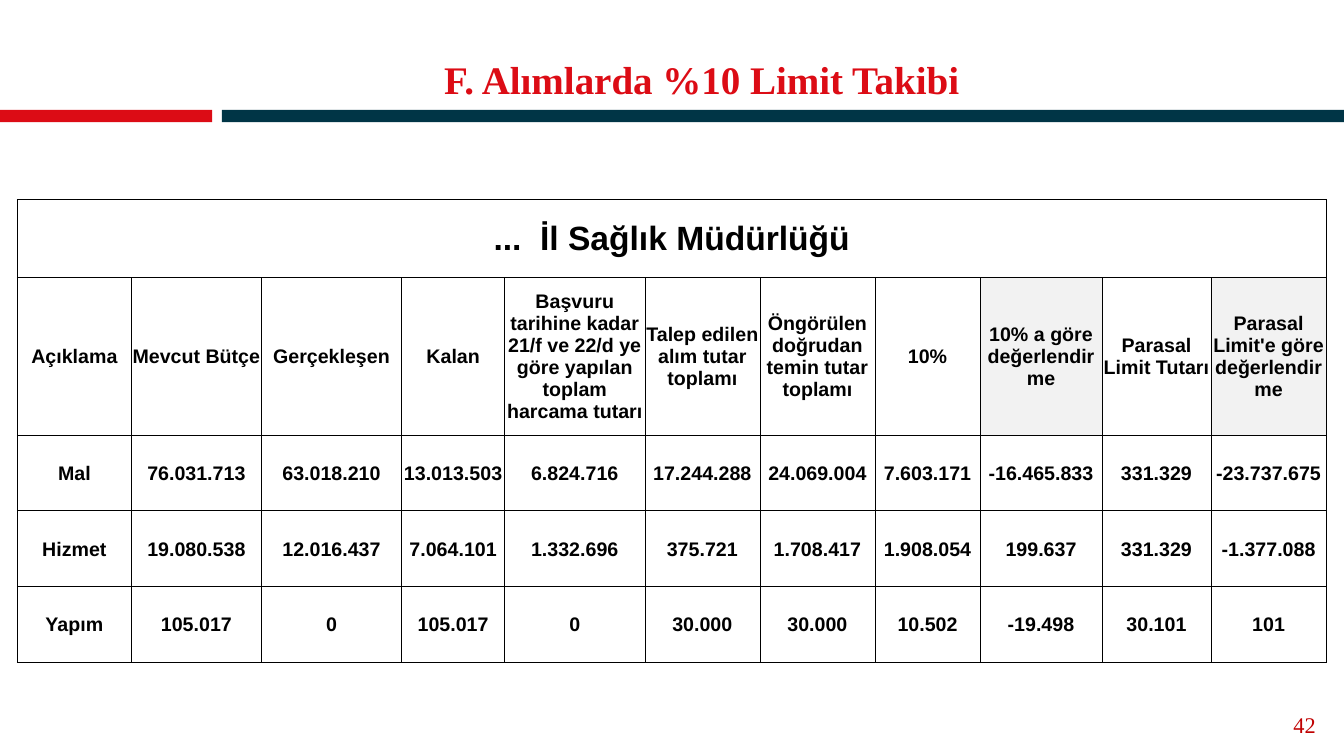
import pptx
import pptx.dml.color
import pptx.enum.shapes
import pptx.enum.text
import pptx.oxml
import pptx.oxml.ns
import pptx.util

Cm, Pt = pptx.util.Cm, pptx.util.Pt
ALIGN = pptx.enum.text.PP_ALIGN
MIDDLE = pptx.enum.text.MSO_ANCHOR.MIDDLE

TITLE = "F. Alımlarda %10 Limit Takibi"
NUMBER = "42"
OFFICE = "...  İl Sağlık Müdürlüğü"
HEADS = [
    "Açıklama", "Mevcut Bütçe", "Gerçekleşen", "Kalan",
    "Başvuru tarihine kadar 21/f ve 22/d ye göre yapılan toplam harcama tutarı",
    "Talep edilen alım tutar toplamı",
    "Öngörülen doğrudan temin tutar toplamı",
    "10%", "10% a göre değerlendirme", "Parasal Limit Tutarı",
    "Parasal Limit'e göre değerlendirme",
]
BUDGET = [
    ["Mal", "76.031.713", "63.018.210", "13.013.503", "6.824.716", "17.244.288",
     "24.069.004", "7.603.171", "-16.465.833", "331.329", "-23.737.675"],
    ["Hizmet", "19.080.538", "12.016.437", "7.064.101", "1.332.696", "375.721",
     "1.708.417", "1.908.054", "199.637", "331.329", "-1.377.088"],
    ["Yapım", "105.017", "0", "105.017", "0", "30.000",
     "30.000", "10.502", "-19.498", "30.101", "101"],
]
WIDTHS = [2.87, 3.28, 3.53, 2.6, 3.53, 2.9, 2.9, 2.65, 3.07, 2.75, 2.9]
HEIGHTS = [1.97, 3.96] + [1.91] * len(BUDGET)
SHADED = {(1, 8), (1, 10)}
BARS = [(0, 5.35, "DC0C15"), (5.59, 28.28, "003546")]


def color(code):
    return pptx.dml.color.RGBColor.from_string(code)


def write(frame, text, size, face, code, bold, align):
    para = frame.paragraphs[0]
    para.alignment = align
    run = para.add_run()
    run.text = text
    font = run.font
    font.size, font.name, font.bold = Pt(size), face, bold
    font.color.rgb = color(code)


def border(cell, side, width):
    """Draw one side (L, R, T or B) of a cell in black."""
    cell._tc.get_or_add_tcPr().append(pptx.oxml.parse_xml(
        f'<a:ln{side} {pptx.oxml.ns.nsdecls("a")} w="{Pt(width)}">'
        f'<a:solidFill><a:srgbClr val="000000"/></a:solidFill></a:ln{side}>'))


def main():
    deck = pptx.Presentation()
    deck.slide_width, deck.slide_height = Cm(33.87), Cm(19.05)
    slide = deck.slides.add_slide(deck.slide_layouts[5])
    shapes = slide.shapes

    for left, width, code in BARS:
        bar = shapes.add_shape(pptx.enum.shapes.MSO_SHAPE.RECTANGLE,
                               Cm(left), Cm(2.77), Cm(width), Cm(0.31))
        bar.shadow.inherit = False
        bar.fill.solid()
        bar.fill.fore_color.rgb = color(code)
        bar.line.fill.background()

    title = shapes.title
    title.left, title.top = Cm(1.5), Cm(1.18)
    title.width, title.height = Cm(32.37), Cm(1.6)
    title.text_frame.vertical_anchor = MIDDLE
    write(title.text_frame, TITLE, 27.9, "Times New Roman", "DC0C15", True, ALIGN.CENTER)

    page = shapes.add_textbox(Cm(31.12), Cm(17.75), Cm(2.29), Cm(1.02)).text_frame
    page.word_wrap = True
    page.vertical_anchor = MIDDLE
    write(page, NUMBER, 16, "Times New Roman", "C00000", False, ALIGN.RIGHT)

    rows = [[OFFICE] + [""] * (len(HEADS) - 1), HEADS] + BUDGET
    table = shapes.add_table(len(rows), len(HEADS), Cm(0.44), Cm(5.03),
                             Cm(sum(WIDTHS)), Cm(sum(HEIGHTS))).table
    for col, width in zip(table.columns, WIDTHS):
        col.width = Cm(width)
    for row, height in zip(table.rows, HEIGHTS):
        row.height = Cm(height)
    table.cell(0, 0).merge(table.cell(0, len(HEADS) - 1))

    for r, texts in enumerate(rows):
        for c, text in enumerate(texts):
            cell = table.cell(r, c)
            cell.vertical_anchor = MIDDLE
            cell.margin_left = cell.margin_right = cell.margin_top = Cm(0.03)
            cell.margin_bottom = 0
            outer = {"L": c == 0, "R": c == len(HEADS) - 1,
                     "T": r == 0, "B": r == len(rows) - 1}
            for side, edge in outer.items():
                border(cell, side, 1 if edge else 0.5)
            if (r, c) in SHADED:
                cell.fill.solid()
                cell.fill.fore_color.rgb = color("F2F2F2")
            else:
                cell.fill.background()
            if text:
                write(cell.text_frame, text, 14 if r else 24, "Arial", "000000",
                      True, ALIGN.CENTER)

    deck.save("out.pptx")


if __name__ == "__main__":
    main()
